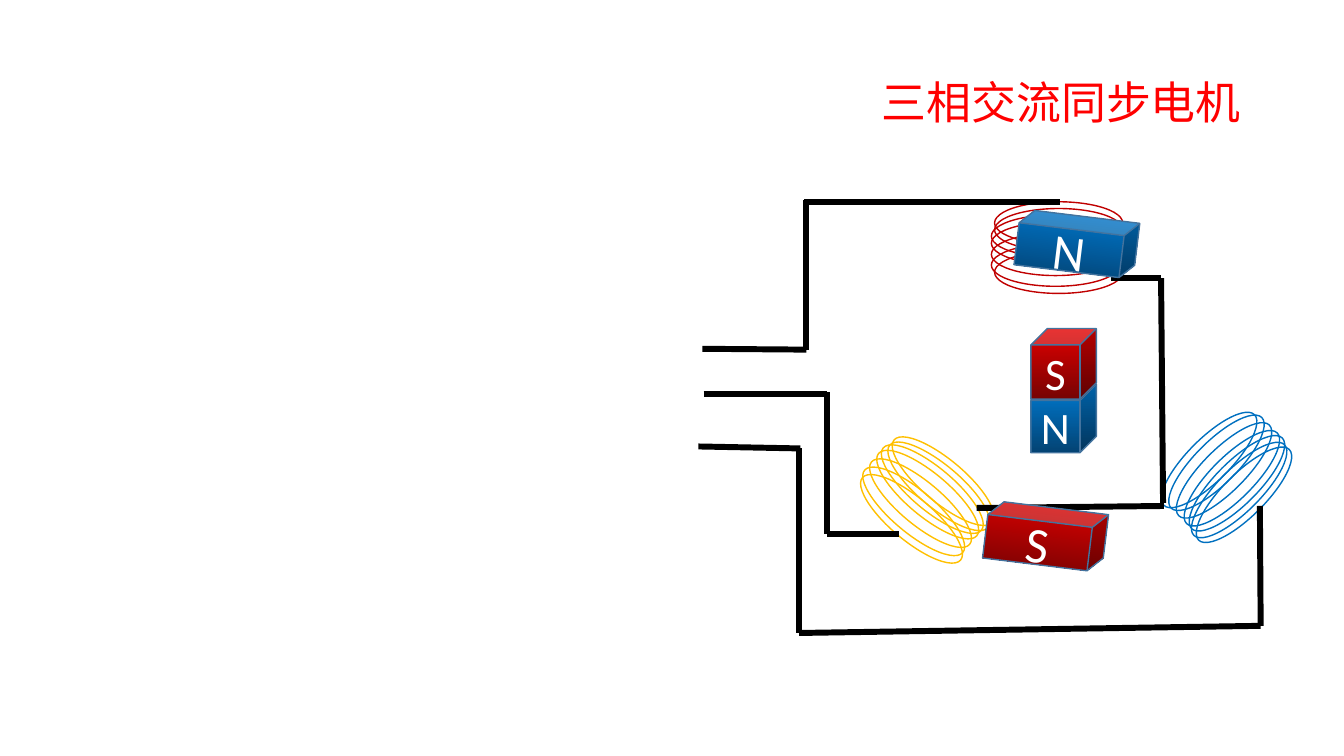
from math import cos, radians, sin

from lxml import etree
from pptx import Presentation
from pptx.dml.color import RGBColor
from pptx.enum.shapes import MSO_CONNECTOR, MSO_SHAPE
from pptx.enum.text import MSO_ANCHOR, PP_ALIGN
from pptx.oxml.ns import qn
from pptx.util import Cm, Pt

LINE = MSO_CONNECTOR.STRAIGHT
OVAL = MSO_SHAPE.OVAL
CUBE = MSO_SHAPE.CUBE
MIDDLE = MSO_ANCHOR.MIDDLE
LEFT = PP_ALIGN.LEFT
CENTER = PP_ALIGN.CENTER

HAN = "Noto Sans CJK SC"
LATIN = "Calibri"
RED = ("E30000", "760303")
BLUE = ("007BD3", "034373")

TURN = (3.23, 1.07)
TURNS = [(0, -0.62), (0, -0.45), (-0.08, -0.29), (-0.08, -0.11),
         (-0.08, 0.17), (-0.08, 0.44), (0, 0.62)]
COILS = [(9.08, 1.16, 0, "C00000"),
         (13.31, 6.95, 135, "0070C0"),
         (5.77, 7.52, 40, "FFC000")]
WIRES = [
    (0.1, 3.71, 2.72, 3.73), (2.72, 3.73, 2.72, -0.03), (2.67, 0, 9.12, 0),
    (0.13, 4.85, 3.25, 4.85), (3.25, 8.38, 3.25, 4.8), (3.25, 8.38, 5.05, 8.38),
    (0, 6.17, 2.57, 6.22), (2.54, 10.87, 2.54, 6.22),
    (2.54, 10.87, 14.17, 10.69), (14.17, 10.69, 14.15, 7.67),
    (7.01, 7.72, 11.73, 7.67), (11.71, 7.59, 11.66, 1.93),
    (10.41, 1.93, 11.66, 1.93),
]
STATOR = [("S", (7.24, 7.7, 3.02, 1.47), RED),
          ("N", (8.03, 0.36, 3.02, 1.42), BLUE)]
ROTOR = [("N", (8.38, 4.6, 1.65, 1.73), BLUE),
         ("S", (8.38, 3.2, 1.65, 1.78), RED)]


def color(text):
    """Return the colour for a hex string."""
    return RGBColor.from_string(text)


def style(par, font, size, tint, align):
    """Format the runs of one paragraph."""
    par.alignment = align
    for run in par.runs:
        run.font.name = font
        run.font.size = Pt(size)
        run.font.color.rgb = color(tint)
        east = etree.SubElement(run._r.get_or_add_rPr(), qn("a:ea"))
        east.set("typeface", font)


def add_title(slide, box, text):
    """Place and format the slide title."""
    title = slide.shapes.title
    title.left, title.top, title.width, title.height = map(Cm, box)
    frame = title.text_frame
    frame.text = text
    frame.word_wrap = True
    frame.vertical_anchor = MIDDLE
    style(frame.paragraphs[0], HAN, 32.1, "FF0000", LEFT)


def add_coil(slide, x, y, angle, tint):
    """Wind one coil around its centre, turned by an angle."""
    wide, high = TURN
    c, s = cos(radians(angle)), sin(radians(angle))
    for dx, dy in TURNS:
        left = x + dx * c - dy * s - wide / 2
        top = y + dx * s + dy * c - high / 2
        turn = slide.shapes.add_shape(OVAL, Cm(left), Cm(top), Cm(wide), Cm(high))
        turn.rotation = angle
        turn.shadow.inherit = False
        turn.fill.background()
        turn.line.color.rgb = color(tint)
        turn.line.width = Pt(1)


def add_wire(slide, x, y, ends):
    """Draw one wire from a corner point."""
    x1, y1, x2, y2 = ends
    wire = slide.shapes.add_connector(
        LINE, Cm(x + x1), Cm(y + y1), Cm(x + x2), Cm(y + y2))
    wire.line.color.rgb = color("000000")
    wire.line.width = Pt(4.25)
    etree.SubElement(wire._element.spPr, qn("a:effectLst"))


def add_magnet(slide, x, y, pole, box, tints, size, angle):
    """Draw one lettered magnet block."""
    left, top, wide, high = box
    block = slide.shapes.add_shape(
        CUBE, Cm(x + left), Cm(y + top), Cm(wide), Cm(high))
    block.rotation = angle
    block.shadow.inherit = False
    block.fill.gradient()
    block.fill.gradient_angle = 270
    for stop, tint in zip(block.fill.gradient_stops, tints):
        stop.color.rgb = color(tint)
    block.line.color.rgb = color("43739E")
    block.line.width = Pt(1)
    frame = block.text_frame
    frame.text = pole
    frame.vertical_anchor = MIDDLE
    style(frame.paragraphs[0], LATIN, size, "FFFFFF", CENTER)


def add_motor(slide, x, y):
    """Build the motor: coils, wires, stator poles and rotor."""
    for dx, dy, angle, tint in COILS:
        add_coil(slide, x + dx, y + dy, angle, tint)
    for ends in WIRES:
        add_wire(slide, x, y, ends)
    for poles, size, angle in ((STATOR, 35.8, 7), (ROTOR, 32.1, 0)):
        for pole, box, tints in poles:
            add_magnet(slide, x, y, pole, box, tints, size, angle)


def main():
    """Build and save the slide."""
    deck = Presentation()
    deck.slide_width, deck.slide_height = Cm(33.87), Cm(19.05)
    slide = deck.slides.add_slide(deck.slide_layouts[5])
    add_title(slide, (21.97, 1.75, 10.9, 1.63), "三相交流同步电机")
    add_motor(slide, 17.6, 5.08)
    deck.save("out.pptx")


if __name__ == "__main__":
    main()
